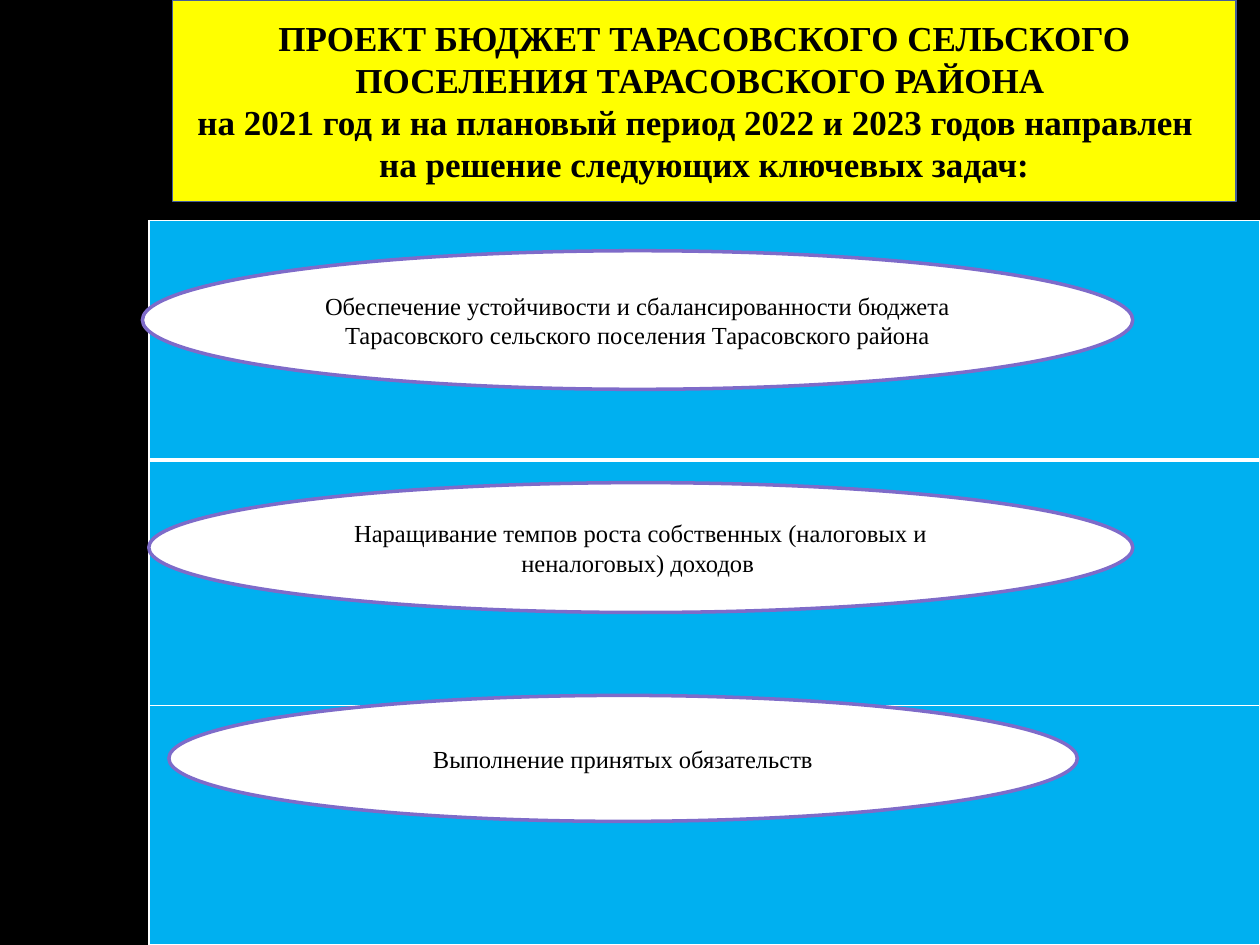
from copy import deepcopy

from lxml import etree
from pptx import Presentation
from pptx.dml.color import RGBColor
from pptx.enum.shapes import MSO_SHAPE
from pptx.enum.text import MSO_ANCHOR, MSO_AUTO_SIZE, PP_ALIGN
from pptx.oxml.ns import qn
from pptx.util import Pt

OVAL = MSO_SHAPE.OVAL
MIDDLE = MSO_ANCHOR.MIDDLE
NO_AUTOFIT = MSO_AUTO_SIZE.NONE
CENTER = PP_ALIGN.CENTER
TITLE_ONLY = 5

FONT = "Times New Roman"
BLACK, WHITE, YELLOW = "000000", "FFFFFF", "FFFF00"
BLUE, NAVY, VIOLET = "00B0F0", "465F9A", "7E6BC9"

TITLE = (
    "ПРОЕКТ БЮДЖЕТ ТАРАСОВСКОГО СЕЛЬСКОГО ПОСЕЛЕНИЯ ТАРАСОВСКОГО РАЙОНА \v"
    "на 2021 год и на плановый период 2022 и 2023 годов направлен  \v"
    "на решение следующих ключевых задач:"
)
TASKS = [
    ("Обеспечение устойчивости и сбалансированности бюджета "
     "Тарасовского сельского поселения Тарасовского района",
     (81.4, 143.3, 565.9, 79.2)),
    ("Наращивание темпов роста собственных (налоговых и неналоговых) доходов ",
     (85, 275.8, 562.3, 74.2)),
    ("Выполнение принятых обязательств",
     (96.5, 397.4, 519.1, 72)),
]


def paint(fill, color):
    fill.solid()
    fill.fore_color.rgb = RGBColor.from_string(color)


def outline(shape, color, width):
    paint(shape.line.fill, color)
    shape.line.width = Pt(width)


def write_centered(shape, text, size, bold=False):
    frame = shape.text_frame
    frame.text = text
    frame.word_wrap = True
    frame.auto_size = NO_AUTOFIT
    frame.vertical_anchor = MIDDLE
    paragraph = frame.paragraphs[0]
    paragraph.alignment = CENTER
    for run in paragraph.runs:
        run.font.name = FONT
        run.font.size = Pt(size)
        run.font.bold = bold
        run.font.color.rgb = RGBColor.from_string(BLACK)
    # Line breaks need the run's size too, or they stretch the line.
    for line_break in paragraph._p.findall(qn("a:br")):
        line_break.insert(0, deepcopy(paragraph.runs[0]._r.rPr))


def place_title(slide, box):
    title = slide.shapes.title
    title.left, title.top, title.width, title.height = map(Pt, box)
    paint(title.fill, YELLOW)
    outline(title, NAVY, 0.75)
    write_centered(title, TITLE, 20, bold=True)


def set_borders(cell, color, widths):
    """Draw the sides named in widths; the lines go before the cell's fill."""
    properties = cell._tc.get_or_add_tcPr()
    for index, (side, width) in enumerate(widths.items()):
        line = etree.Element(qn(f"a:ln{side}"), w=str(Pt(width)))
        solid = etree.SubElement(line, qn("a:solidFill"))
        etree.SubElement(solid, qn("a:srgbClr"), val=color)
        properties.insert(index, line)


def add_bands(slide, box, heights):
    table = slide.shapes.add_table(len(heights), 1, *map(Pt, box)).table
    table.first_row = table.horz_banding = False
    for index, height in enumerate(heights):
        table.rows[index].height = Pt(height)
        cell = table.cell(index, 0)
        paint(cell.fill, BLUE)
        set_borders(cell, WHITE, {
            "L": 1, "R": 1,
            "T": 3 if index == 1 else 1,
            "B": 3 if index == 0 else 1,
        })


def add_task(slide, text, box):
    task = slide.shapes.add_shape(OVAL, *map(Pt, box))
    task.shadow.inherit = False
    paint(task.fill, WHITE)
    outline(task, VIOLET, 2)
    write_centered(task, text, 14)


def main():
    deck = Presentation()
    deck.slide_width, deck.slide_height = Pt(720), Pt(540)
    slide = deck.slides.add_slide(deck.slide_layouts[TITLE_ONLY])
    paint(slide.background.fill, BLACK)
    place_title(slide, (98.6, 0, 607.7, 115.2))
    add_bands(slide, (85, 126, 635, 414), (136.8, 140.4, 136.8))
    for text, box in TASKS:
        add_task(slide, text, box)
    deck.save("out.pptx")


if __name__ == "__main__":
    main()
